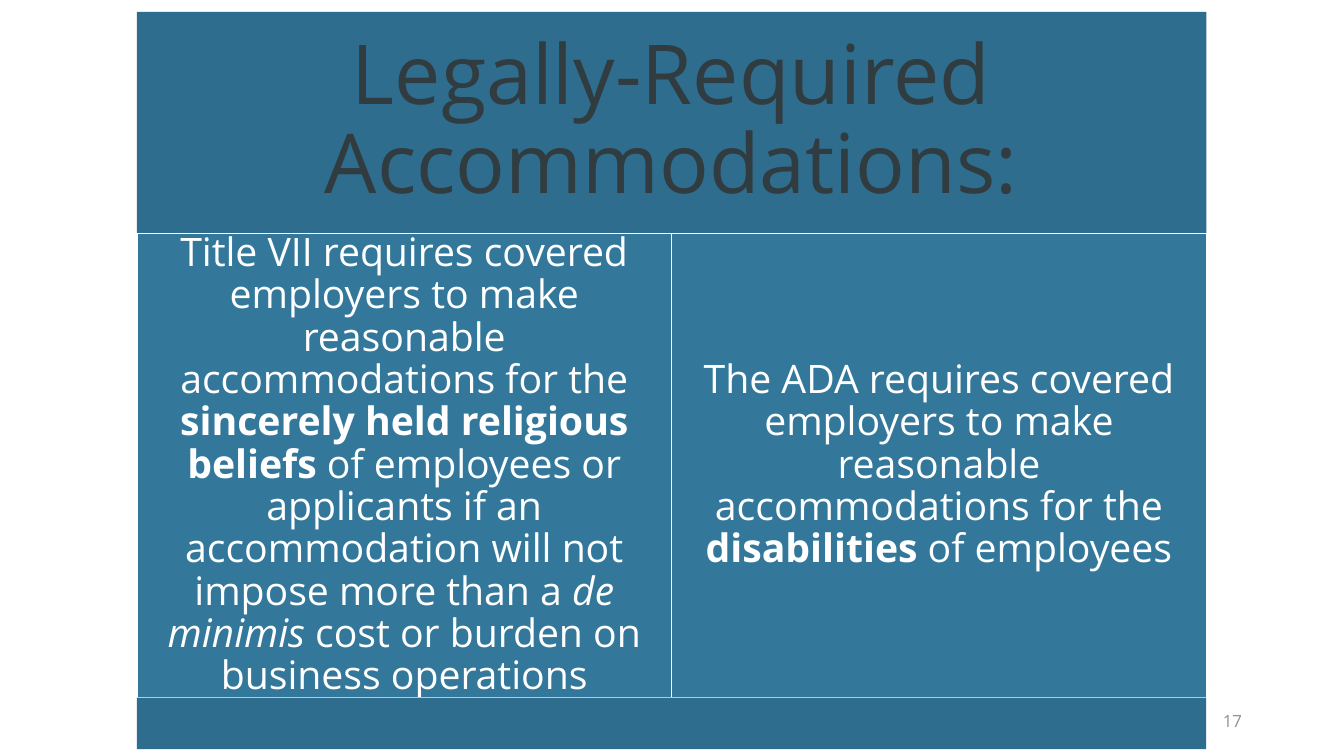
from dataclasses import dataclass

from pptx import Presentation
from pptx.dml.color import RGBColor
from pptx.enum import shapes, text
from pptx.util import Cm, Pt


@dataclass(frozen=True)
class Theme:
    font: str = "Open Sans"
    band: RGBColor = RGBColor.from_string("2E6D8D")
    panel: RGBColor = RGBColor.from_string("33789B")
    white: RGBColor = RGBColor.from_string("FFFFFF")
    heading: RGBColor = RGBColor.from_string("313C41")
    muted: RGBColor = RGBColor.from_string("909293")
    heading_size: float = 59
    body_size: float = 28
    number_size: float = 12


THEME = Theme()

# Each run is (wording, style)
TITLE = [("Legally-Required Accommodations:", "")]
PANELS = [
    [
        ("Title VII requires covered employers to make reasonable accommodations for the ", ""),
        ("sincerely held religious beliefs", "bold"),
        (" of employees or applicants if an accommodation will not impose more than a ", ""),
        ("de minimis", "italic"),
        (" cost or burden on business operations", ""),
    ],
    [
        ("The ADA requires covered employers to make reasonable accommodations for the ", ""),
        ("disabilities", "bold"),
        (" of employees", ""),
    ],
]


def place(sp, left, top, width, height):
    sp.left, sp.top, sp.width, sp.height = Cm(left), Cm(top), Cm(width), Cm(height)


def paint(sp, fill, line=None):
    sp.fill.solid()
    sp.fill.fore_color.rgb = fill
    if line is None:
        sp.line.fill.background()
    else:
        sp.line.color.rgb = line
        sp.line.width = Pt(1)


def write(sp, runs, size, color, align=text.PP_ALIGN.CENTER, spacing=0.9, inset=None):
    tf = sp.text_frame
    tf.word_wrap = True
    tf.auto_size = text.MSO_AUTO_SIZE.NONE
    tf.vertical_anchor = text.MSO_ANCHOR.MIDDLE
    if inset is not None:
        tf.margin_left = tf.margin_top = tf.margin_right = tf.margin_bottom = Cm(inset)
    p = tf.paragraphs[0]
    p.alignment = align
    p.line_spacing = spacing
    p.space_before = p.space_after = Pt(0)
    for wording, style in runs:
        r = p.add_run()
        r.text = wording
        r.font.name = THEME.font
        r.font.size = Pt(size)
        r.font.color.rgb = color
        r.font.bold = style == "bold"
        r.font.italic = style == "italic"
    return p


def remove_bullet(p):
    pPr = p._p.get_or_add_pPr()
    pPr.set("marL", "0")
    pPr.set("indent", "0")
    pPr.append(pPr.makeelement(
        "{http://schemas.openxmlformats.org/drawingml/2006/main}buNone", {}))


def title_band(s, left, top, width, height):
    sp = s.shapes.title
    place(sp, left, top, width, height)
    paint(sp, THEME.band)
    write(sp, TITLE, THEME.heading_size, THEME.heading, inset=0.63)


def panel_row(s, left, top, width, height):
    panel_width = width / len(PANELS)
    bodies = list(s.placeholders)[1:]
    for i, (sp, runs) in enumerate(zip(bodies, PANELS)):
        place(sp, left + i * panel_width, top, panel_width, height)
        paint(sp, THEME.panel, THEME.white)
        remove_bullet(write(sp, runs, THEME.body_size, THEME.white, inset=0.3))


def base_band(s, left, top, width, height):
    sp = s.shapes.add_shape(shapes.MSO_SHAPE.RECTANGLE,
                            Cm(left), Cm(top), Cm(width), Cm(height))
    sp.shadow.inherit = False
    paint(sp, THEME.band)


def slide_number(s, left, top, width, height):
    sp = s.shapes.add_textbox(Cm(left), Cm(top), Cm(width), Cm(height))
    write(sp, [("17", "")], THEME.number_size, THEME.muted,
          align=text.PP_ALIGN.RIGHT, spacing=1.0)


def accommodations_slide(prs, left, top, width):
    s = prs.slides.add_slide(prs.slide_layouts.get_by_name("Two Content"))
    # Stacked bands: heading, two panels, base
    for draw, height in ((title_band, 5.58), (panel_row, 11.7), (base_band, 1.3)):
        draw(s, left, top, width, height)
        top += height
    # Page number beside the base band
    slide_number(s, 23.93, 17.65, 7.62, 1.02)


def main():
    prs = Presentation()
    prs.slide_width, prs.slide_height = Cm(33.87), Cm(19.05)
    accommodations_slide(prs, 3.45, 0.3, 26.95)
    prs.save("out.pptx")


if __name__ == "__main__":
    main()
